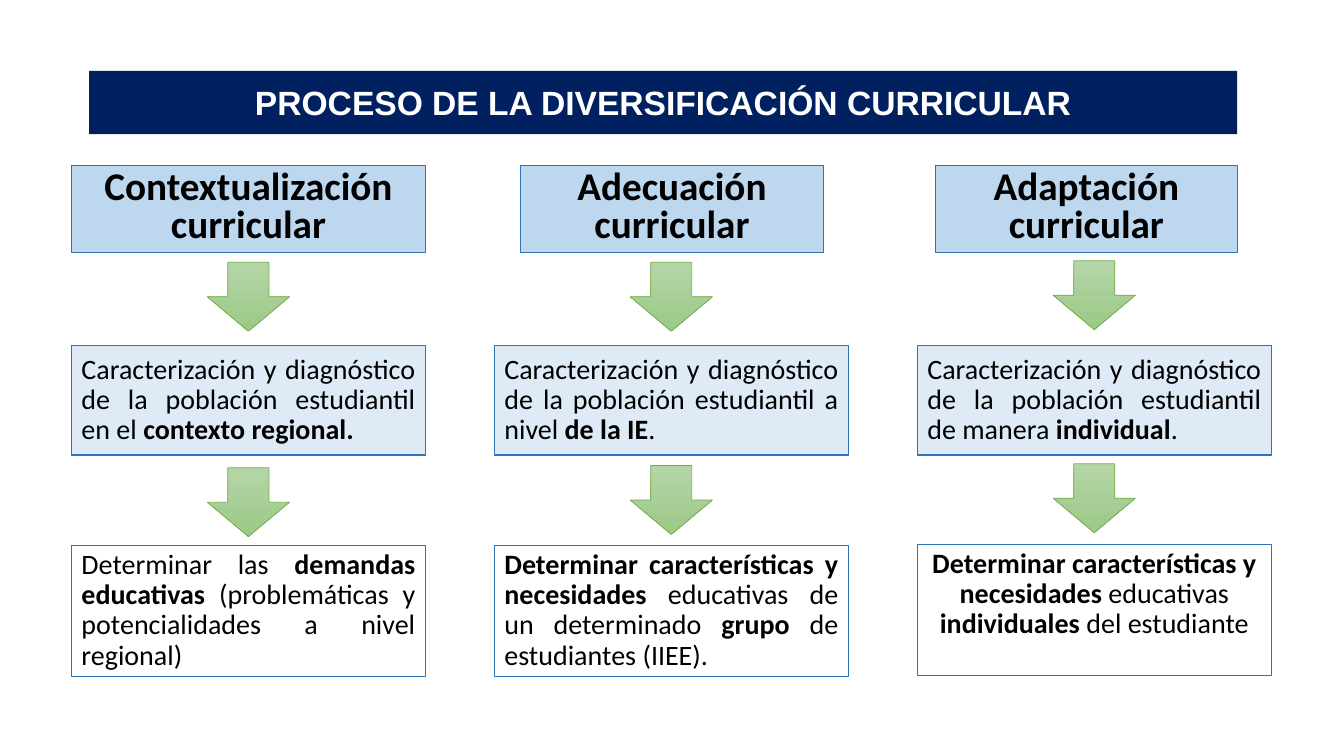
from lxml import etree
from pptx import Presentation
from pptx.dml.color import RGBColor
from pptx.enum import shapes, text
from pptx.oxml.ns import qn
from pptx.util import Pt

TITLE = "PROCESO DE LA DIVERSIFICACIÓN CURRICULAR"
PROFILE = "Caracterización y diagnóstico de la población estudiantil "
CENTER, JUSTIFY = text.PP_ALIGN.CENTER, text.PP_ALIGN.JUSTIFY
TOP, MIDDLE = text.MSO_ANCHOR.TOP, text.MSO_ANCHOR.MIDDLE

# Each span is (words, bold).
COLUMNS = [
    {
        "head": "Contextualización curricular", "head_left": 51.1, "head_width": 252.7,
        "profile": [(PROFILE + "en el ", False), ("contexto regional.", True)],
        "goal": [("Determinar las ", False), ("demandas educativas", True),
                 (" (problemáticas y potencialidades a nivel regional)", False)],
        "goal_top": 389.5, "goal_align": JUSTIFY, "arrow_tops": (187.4, 334.1),
    },
    {
        "head": "Adecuación curricular", "head_left": 372, "head_width": 216,
        "profile": [(PROFILE + "a nivel ", False), ("de la IE", True), (".", False)],
        "goal": [("Determinar características y necesidades ", True),
                 ("educativas de un determinado ", False), ("grupo", True),
                 (" de estudiantes (IIEE).", False)],
        "goal_top": 389.5, "goal_align": JUSTIFY, "arrow_tops": (187.4, 332.6),
    },
    {
        "head": "Adaptación curricular", "head_left": 668, "head_width": 216,
        "profile": [(PROFILE + "de manera ", False), ("individual", True), (".", False)],
        "goal": [("Determinar características y necesidades ", True),
                 ("educativas ", False), ("individuales", True),
                 (" del estudiante", False)],
        "goal_top": 388.8, "goal_align": CENTER, "arrow_tops": (186.3, 331.3),
    },
]
COLORS = {
    "banner": "002060", "head": "BDD7EE", "profile": "DEEBF7", "border": "2E75B6",
    "arrow_top": "B5D5A7", "arrow_bottom": "9CC987", "arrow_line": "70AD47",
    "black": "000000", "white": "FFFFFF",
}
LEFT, STEP, WIDTH = 51.1, 302.1, 252.7
ARROW_WIDTH, ARROW_HEIGHT = 58.8, 49.2


def color(name):
    return RGBColor.from_string(COLORS[name])


def place(shape, left, top, width, height):
    shape.left, shape.top = Pt(left), Pt(top)
    shape.width, shape.height = Pt(width), Pt(height)


def add_shape(kind, left, top, width, height, line, weight):
    shape = page.shapes.add_shape(kind, Pt(left), Pt(top), Pt(width), Pt(height))
    shape.shadow.inherit = False
    shape.line.color.rgb = color(line)
    shape.line.width = Pt(weight)
    return shape


def add_box(left, top, width, height, fill, spans, size, spacing, align, anchor):
    box = add_shape(shapes.MSO_SHAPE.RECTANGLE, left, top, width, height, "border", 0.75)
    if fill:
        box.fill.solid()
        box.fill.fore_color.rgb = color(fill)
    else:
        box.fill.background()
    box.text_frame.word_wrap = True
    box.text_frame.vertical_anchor = anchor
    para = box.text_frame.paragraphs[0]
    para.alignment, para.line_spacing, para.space_before = align, spacing, Pt(10)
    para.font.name, para.font.size = "Calibri", Pt(size)
    para.font.color.rgb = color("black")
    for words, bold in spans:
        span = para.add_run()
        span.text, span.font.bold = words, bold


def add_arrow(center, top):
    arrow = add_shape(shapes.MSO_SHAPE.DOWN_ARROW, center - ARROW_WIDTH / 2, top,
                      ARROW_WIDTH, ARROW_HEIGHT, "arrow_line", 0.5)
    arrow.fill.gradient()
    arrow.fill.gradient_angle = 270
    for stop, name in zip(arrow.fill.gradient_stops, ("arrow_top", "arrow_bottom")):
        stop.color.rgb = color(name)


def format_title(title):
    place(title, 63.7, 50.6, 820, 45.2)
    outline = etree.SubElement(title.element.spPr, qn("a:prstGeom"), prst="roundRect")
    etree.SubElement(outline, qn("a:avLst"))
    title.fill.solid()
    title.fill.fore_color.rgb = color("banner")
    title.text_frame.text = TITLE
    title.text_frame.auto_size = text.MSO_AUTO_SIZE.NONE
    title.text_frame.vertical_anchor = MIDDLE
    para = title.text_frame.paragraphs[0]
    para.alignment, para.line_spacing = CENTER, 1.0
    para.font.name, para.font.size, para.font.bold = "Arial", Pt(24), True
    para.font.color.rgb = color("white")


deck = Presentation()
deck.slide_width, deck.slide_height = Pt(960), Pt(540)
page = deck.slides.add_slide(deck.slide_layouts[5])
format_title(page.shapes.title)

for index, column in enumerate(COLUMNS):
    left = LEFT + index * STEP
    add_box(column["head_left"], 118.2, column["head_width"], 62, "head",
            [(column["head"], True)], 28, 0.8, CENTER, TOP)
    add_box(left, 246.8, WIDTH, 78.2, "profile", column["profile"], 20, 0.9, JUSTIFY, MIDDLE)
    add_box(left, column["goal_top"], WIDTH, 94, None, column["goal"], 20, 0.9,
            column["goal_align"], TOP)
    for top in column["arrow_tops"]:
        add_arrow(left + WIDTH / 2, top)

deck.save("out.pptx")
